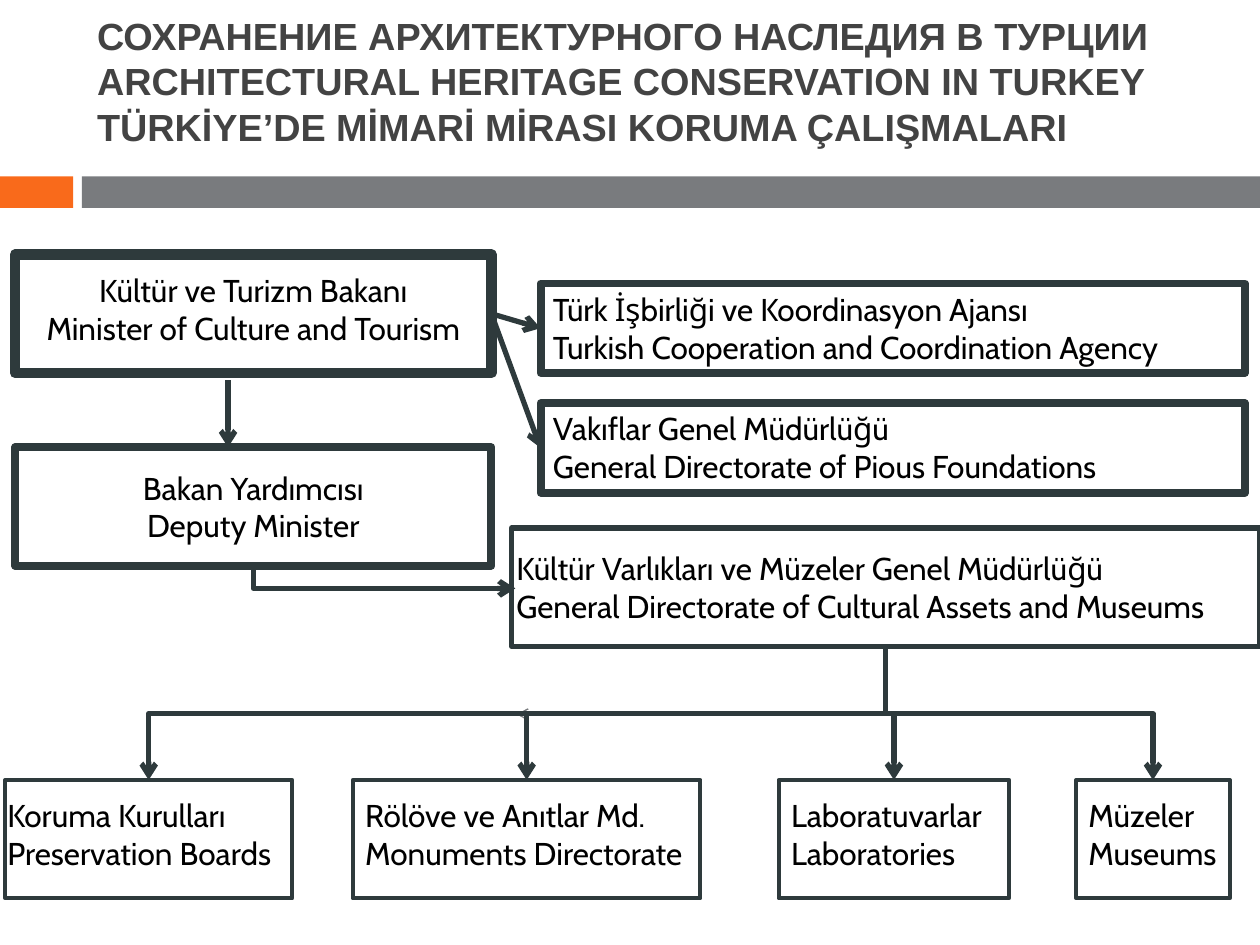
import pptx
import pptx.dml.color
import pptx.enum.shapes
import pptx.enum.text
import pptx.oxml.ns
import pptx.util
from lxml import etree

INK = pptx.dml.color.RGBColor(0x2E, 0x3A, 0x3C)
GREY = pptx.dml.color.RGBColor(0x79, 0x7B, 0x7E)
ORANGE = pptx.dml.color.RGBColor(0xF9, 0x6A, 0x1B)
TITLE_INK = pptx.dml.color.RGBColor(0x43, 0x43, 0x43)
BLACK = pptx.dml.color.RGBColor(0, 0, 0)
COLUMNS, ROWS = 100, 75
TOP, LEFT, BOTTOM, RIGHT = range(4)
ALIGN = pptx.enum.text.PP_ALIGN
ANCHOR = pptx.enum.text.MSO_ANCHOR
AUTO_SIZE = pptx.enum.text.MSO_AUTO_SIZE
RECTANGLE = pptx.enum.shapes.MSO_SHAPE.RECTANGLE
CONNECTOR = pptx.enum.shapes.MSO_CONNECTOR


def assign(target, values):
    """Set each attribute in the dict on the target."""
    for name, value in values.items():
        setattr(target, name, value)


class Chart:
    """Hold the deck's style and current slide, measured on a 100 by 75 grid."""

    title_font = {"name": "Arial", "size": pptx.util.Pt(21.6), "bold": True}
    label_font = {"name": "Cabin", "size": pptx.util.Pt(18)}

    def __init__(self, deck):
        """Add a title-only slide to the deck."""
        self.column = deck.slide_width / COLUMNS
        self.row = deck.slide_height / ROWS
        self.page = deck.slides.add_slide(deck.slide_layouts[5])
        self.shapes = self.page.shapes

    def frame(self, left, top, width, height):
        """Turn grid units into lengths."""
        return (int(left * self.column), int(top * self.row),
                int(width * self.column), int(height * self.row))

    def fill_text(self, box, lines, font, color, align, line_spacing=None):
        """Put one paragraph per line in a box."""
        box.text_frame.text = "\n".join(lines)
        for para in box.text_frame.paragraphs:
            assign(para, {"alignment": align, "line_spacing": line_spacing})
            for span in para.runs:
                assign(span.font, font)
                span.font.color.rgb = color

    def title(self, lines, *area):
        """Place and format the title placeholder."""
        box = self.shapes.title
        assign(box, dict(zip(("left", "top", "width", "height"), self.frame(*area))))
        assign(box.text_frame, {
            "word_wrap": True, "auto_size": AUTO_SIZE.NONE,
            "vertical_anchor": ANCHOR.MIDDLE,
            "margin_bottom": pptx.util.Inches(0.35)})
        self.fill_text(box, ["\v".join(lines)], self.title_font, TITLE_INK,
                       ALIGN.LEFT, pptx.util.Pt(26))

    def bar(self, color, *area):
        """Draw a filled bar without an outline."""
        bar = self.shapes.add_shape(RECTANGLE, *self.frame(*area))
        bar.shadow.inherit = False
        bar.fill.solid()
        bar.fill.fore_color.rgb = color
        bar.line.fill.background()

    def node(self, lines, area, weight, label, align=ALIGN.LEFT):
        """Draw an outlined box with its label at (left, top, width)."""
        box = self.shapes.add_shape(RECTANGLE, *self.frame(*area))
        box.shadow.inherit = False
        box.fill.background()
        box.line.color.rgb = INK
        box.line.width = pptx.util.Pt(weight)
        text = self.shapes.add_textbox(*self.frame(*label, 7.1))
        assign(text.text_frame, {"word_wrap": True,
                                 "auto_size": AUTO_SIZE.SHAPE_TO_FIT_TEXT})
        self.fill_text(text, lines, self.label_font, BLACK, align)
        return box

    def connector(self, kind, start, end, color=INK, weight=3):
        """Draw a connector with an open arrowhead at its end."""
        line = self.shapes.add_connector(kind, *self.frame(*start, *end))
        line.line.color.rgb = color
        line.line.width = pptx.util.Pt(weight)
        properties = line._element.spPr
        outline = properties.find(pptx.oxml.ns.qn("a:ln"))
        etree.SubElement(outline, pptx.oxml.ns.qn("a:tailEnd"), type="arrow")
        etree.SubElement(properties, pptx.oxml.ns.qn("a:effectLst"))
        return line

    def arrow(self, start, end, source=None, target=None, side=TOP):
        """Draw a straight arrow, joined to its source's right and target's side."""
        line = self.connector(CONNECTOR.STRAIGHT, start, end)
        if source is not None:
            line.begin_connect(source, RIGHT)
        if target is not None:
            line.end_connect(target, side)

    def elbow(self, start, end, preset="bentConnector3", **style):
        """Draw a bent arrow that leaves downward, as a turned connector."""
        (x1, y1), (x2, y2) = start, end
        middle_x, middle_y = (x1 + x2) / 2, (y1 + y2) / 2
        half_width, half_height = (y2 - y1) / 2, abs(x2 - x1) / 2
        rightward = x2 > x1
        reach = -half_width if rightward else half_width
        line = self.connector(
            CONNECTOR.ELBOW, (middle_x - reach, middle_y - half_height),
            (middle_x + reach, middle_y + half_height), **style)
        properties = line._element.spPr
        turn = 270 if rightward else 90
        properties.find(pptx.oxml.ns.qn("a:xfrm")).set("rot", str(turn * 60000))
        properties.find(pptx.oxml.ns.qn("a:prstGeom")).set("prst", preset)


def main():
    """Build the organisation chart and save it."""
    deck = pptx.Presentation()
    deck.slide_width = pptx.util.Inches(10)
    deck.slide_height = pptx.util.Inches(7.5)
    chart = Chart(deck)
    chart.bar(ORANGE, 0, 14, 5.8, 2.5)
    chart.bar(GREY, 6.5, 14, 93.5, 2.5)
    chart.title(["СОХРАНЕНИЕ АРХИТЕКТУРНОГО НАСЛЕДИЯ В ТУРЦИИ",
                 "ARCHITECTURAL HERITAGE CONSERVATION IN TURKEY",
                 "TÜRKİYE’DE MİMARİ MİRASI KORUMA ÇALIŞMALARI"],
                6.7, 2.5, 89.2, 10.8)

    minister = chart.node(
        ["Kültür ve Turizm Bakanı", "Minister of Culture and Tourism"],
        (1.2, 20.2, 37.8, 9.4), 6, (1.2, 21, 37.8), ALIGN.CENTER)
    agencies = [
        (["Türk İşbirliği ve Koordinasyon Ajansı",
          "Turkish Cooperation and Coordination Agency"], 22.5),
        (["Vakıflar Genel Müdürlüğü",
          "General Directorate of Pious Foundations"], 32)]
    for lines, top in agencies:
        agency = chart.node(lines, (42.9, top, 55.9, 7.1), 4.5, (42.9, top, 55.9))
        chart.arrow((39, 24.9), (42.9, top + 3.55), minister, agency, LEFT)
    chart.arrow((18.1, 30.2), (18.1, 35.5))
    chart.node(["Bakan Yardımcısı", "Deputy Minister"],
               (1.2, 35.5, 37.8, 9.4), 4.5, (1.2, 36.7, 37.8), ALIGN.CENTER)
    chart.node(["Kültür Varlıkları ve Müzeler Genel Müdürlüğü",
                "General Directorate of Cultural Assets and Museums"],
               (40.6, 41.9, 59.4, 9.4), 3, (40, 43.1, 69))
    chart.elbow((20.1, 45), (40.9, 46.7), "bentConnector2")

    units = [
        (["Koruma Kurulları", "Preservation Boards"], 0.4, 22.8, -0.4, 26.8),
        (["Rölöve ve Anıtlar Md.", "Monuments Directorate"], 28, 27.6, 28, 31.1),
        (["Laboratuvarlar", "Laboratories"], 61.8, 18.3, 61.8, 20.1),
        (["Müzeler", "Museums"], 85.4, 12.2, 85.4, 13.4)]
    boxes = [chart.node(lines, (left, 61.9, width, 9.4), 2.25,
                        (label_left, 62.7, label_width))
             for lines, left, width, label_left, label_width in units]
    trunk, branch_row, unit_row = (70.3, 51.4), 56.7, 61.9
    chart.elbow(trunk, (41, branch_row), "bentConnector2", color=GREY, weight=0.79)
    for column in (11.8, 91.5):
        chart.elbow(trunk, (column, unit_row))
    for column, box in zip((41.8, 70.95), boxes[1:3]):
        chart.arrow((column, branch_row), (column, unit_row), target=box)
    deck.save("out.pptx")


if __name__ == "__main__":
    main()
